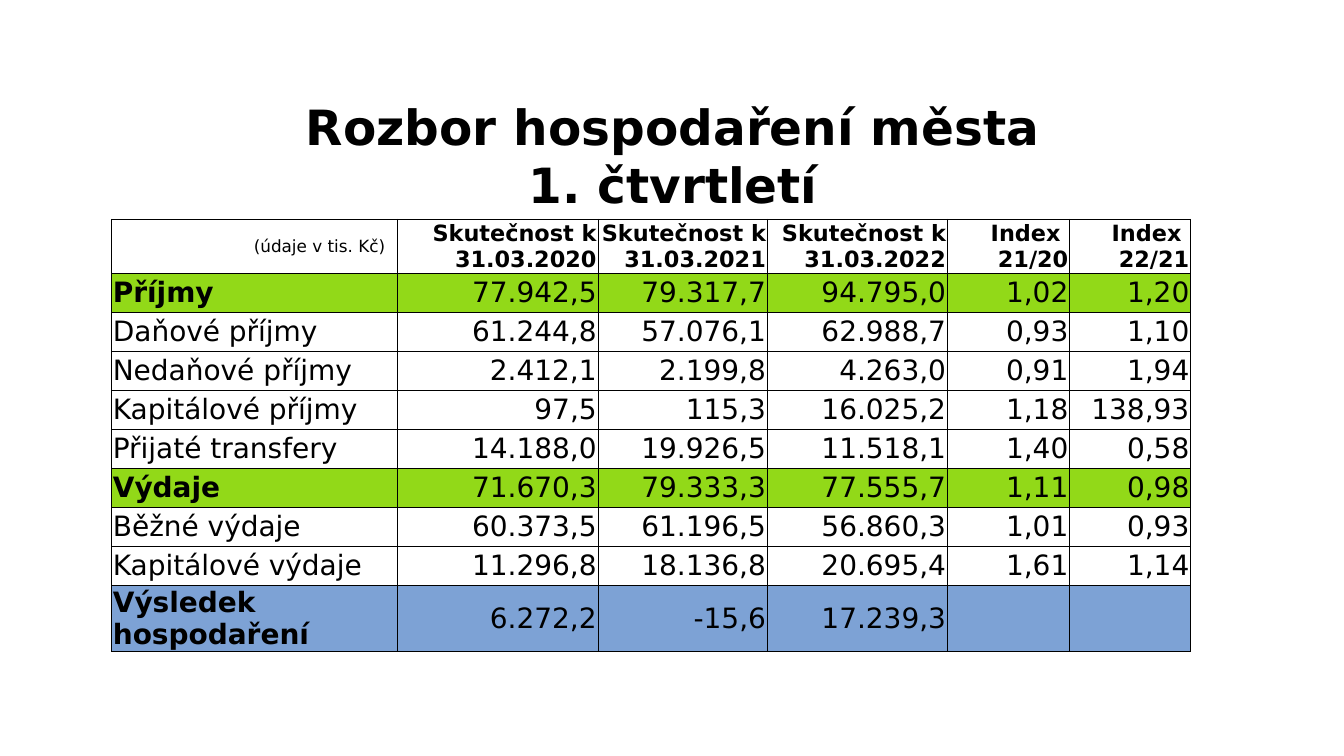
from lxml.etree import SubElement
from pptx import Presentation
from pptx.dml.color import RGBColor
from pptx.enum.text import MSO_ANCHOR, MSO_AUTO_SIZE, PP_ALIGN
from pptx.oxml.ns import qn
from pptx.util import Inches, Pt

WIDE = 10
HIGH = WIDE * 9 / 16
FONT = "DejaVu Sans"
BLACK, GREEN, BLUE = "000000", "92D918", "7DA2D5"
COLS = [21.25, 14.95, 12.6, 13.4, 9.1, 9]
ROW = 5.16
HEAD = ["(údaje v tis. Kč)", "Skutečnost k 31.03.2020", "Skutečnost k 31.03.2021",
        "Skutečnost k 31.03.2022", "Index \n21/20", "Index \n22/21"]
ROWS = [
    ["Příjmy", "77.942,5", "79.317,7", "94.795,0", "1,02", "1,20"],
    ["Daňové příjmy", "61.244,8", "57.076,1", "62.988,7", "0,93", "1,10"],
    ["Nedaňové příjmy", "2.412,1", "2.199,8", "4.263,0", "0,91", "1,94"],
    ["Kapitálové příjmy", "97,5", "115,3", "16.025,2", "1,18", "138,93"],
    ["Přijaté transfery", "14.188,0", "19.926,5", "11.518,1", "1,40", "0,58"],
    ["Výdaje", "71.670,3", "79.333,3", "77.555,7", "1,11", "0,98"],
    ["Běžné výdaje", "60.373,5", "61.196,5", "56.860,3", "1,01", "0,93"],
    ["Kapitálové výdaje", "11.296,8", "18.136,8", "20.695,4", "1,61", "1,14"],
    ["Výsledek hospodaření", "6.272,2", "-15,6", "17.239,3", "", ""],
]
FILLS = {"Příjmy": GREEN, "Výdaje": GREEN, "Výsledek hospodaření": BLUE}


def color(code):
    """Turn a hex string into a colour."""
    return RGBColor.from_string(code)


def across(share):
    """Give a percentage of the slide's width."""
    return Inches(WIDE * share / 100)


def down(share):
    """Give a percentage of the slide's height."""
    return Inches(HIGH * share / 100)


def write(frame, text, size=15, bold=False, align=PP_ALIGN.RIGHT):
    """Fill a text frame with one paragraph per line of text."""
    frame.text = text
    for para in frame.paragraphs:
        para.alignment = align
        for run in para.runs:
            font = run.font
            font.name, font.size, font.bold = FONT, Pt(size), bold
            font.color.rgb = color(BLACK)


def add_title(slide):
    """Place and write the title."""
    title = slide.shapes.title
    title.left, title.top = across(5.1), down(12.2)
    title.width, title.height = across(90), down(16.7)
    frame = title.text_frame
    frame.auto_size = MSO_AUTO_SIZE.NONE
    frame.vertical_anchor = MSO_ANCHOR.MIDDLE
    write(frame, "Rozbor hospodaření města\v1. čtvrtletí", size=26, bold=True,
          align=PP_ALIGN.CENTER)


def add_edges(cell):
    """Draw thin lines on all four sides of a cell."""
    props = cell._tc.get_or_add_tcPr()
    for at, side in enumerate(("lnL", "lnR", "lnT", "lnB")):
        line = SubElement(props, qn(f"a:{side}"), w=str(Pt(0.5)))
        fill = SubElement(line, qn("a:solidFill"))
        SubElement(fill, qn("a:srgbClr"), val=BLACK)
        props.insert(at, line)


def set_cell(cell, text, fill=None, inset=0.01, **form):
    """Write and paint one table cell."""
    cell.margin_left = cell.margin_top = Inches(0.01)
    cell.margin_right, cell.margin_bottom = Inches(inset), 0
    cell.vertical_anchor = MSO_ANCHOR.MIDDLE
    if fill:
        cell.fill.solid()
        cell.fill.fore_color.rgb = color(fill)
    else:
        cell.fill.background()
    add_edges(cell)
    write(cell.text_frame, text, **form)


def add_grid(slide):
    """Build the budget table."""
    count = len(ROWS) + 1
    table = slide.shapes.add_table(count, len(COLS), across(8.3), down(29),
                                   across(sum(COLS)), down(ROW * count)).table
    table.first_row = table.horz_banding = False
    for col, share in zip(table.columns, COLS):
        col.width = across(share)
    for row in table.rows:
        row.height = down(ROW)
    set_cell(table.cell(0, 0), HEAD[0], size=9, inset=0.09)
    for c, text in enumerate(HEAD[1:], 1):
        set_cell(table.cell(0, c), text, size=12, bold=True)
    for r, (label, *values) in enumerate(ROWS, 1):
        fill = FILLS.get(label)
        set_cell(table.cell(r, 0), label, fill, bold=bool(fill), align=PP_ALIGN.LEFT)
        for c, value in enumerate(values, 1):
            set_cell(table.cell(r, c), value, fill)


def main():
    """Build and save the slide."""
    deck = Presentation()
    deck.slide_width, deck.slide_height = Inches(WIDE), Inches(HIGH)
    slide = deck.slides.add_slide(deck.slide_layouts[5])
    add_title(slide)
    add_grid(slide)
    deck.save("out.pptx")


if __name__ == "__main__":
    main()
